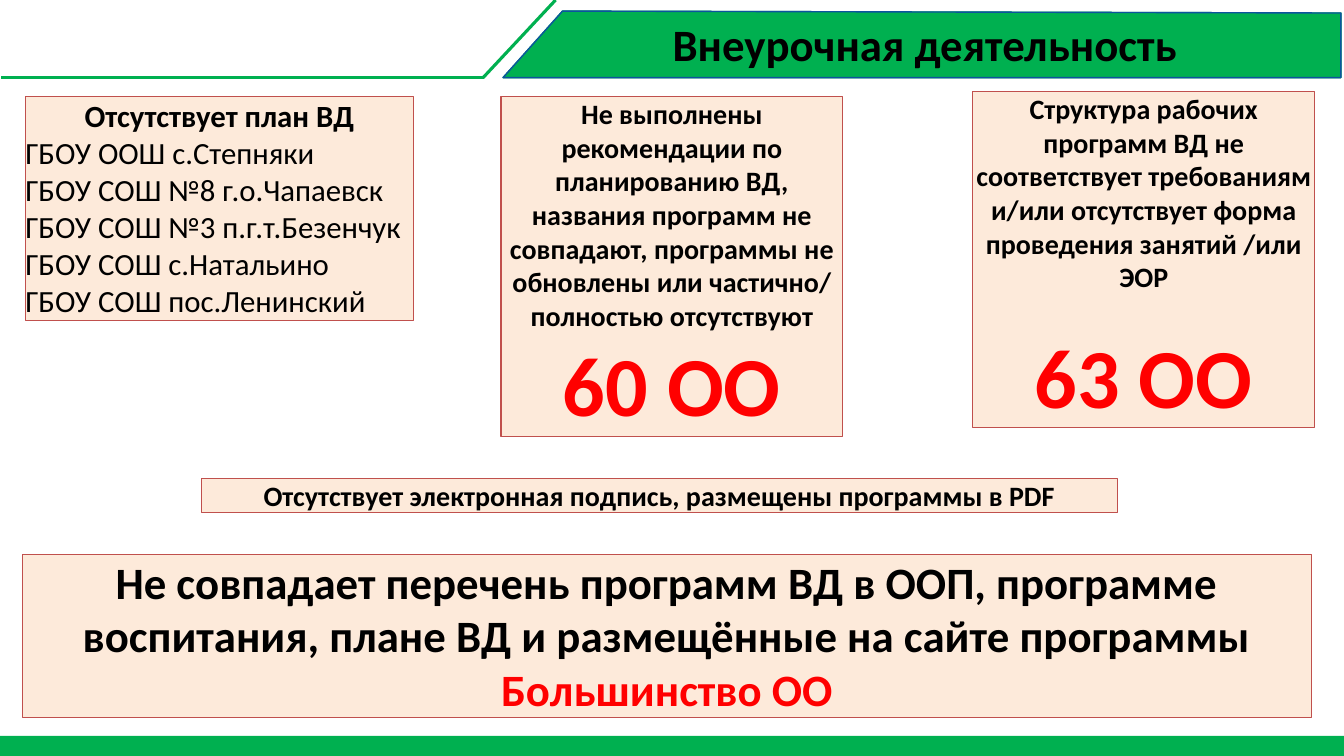
"""Build the slide on shortcomings in extracurricular activity plans."""
import pptx
import pptx.chart.data
import pptx.dml.color
import pptx.enum.shapes
import pptx.enum.text
import pptx.oxml
import pptx.util

COLORS = {"green": "00B050", "blue": "0C549E", "cream": "FDEADA",
          "brick": "C0504D", "black": "000000", "red": "FF0000"}
WIDTH, HEIGHT = pptx.util.Inches(13.33), pptx.util.Inches(7.5)
LEFT = pptx.enum.text.PP_ALIGN.LEFT
CENTER = pptx.enum.text.PP_ALIGN.CENTER


def color(name):
    """Return the named colour of the palette."""
    return pptx.dml.color.RGBColor.from_string(COLORS[name])


def grid(*lengths):
    """Turn alternating columns and rows, 100 each per slide, into EMU."""
    return [round(length * (HEIGHT if index % 2 else WIDTH) / 100)
            for index, length in enumerate(lengths)]


def paint(shape, fill, line, weight=1.0):
    """Give a shape its fill and outline, either of which may be None."""
    if fill:
        shape.fill.solid()
        shape.fill.fore_color.rgb = color(fill)
    else:
        shape.fill.background()
    if line:
        shape.line.color.rgb = color(line)
        shape.line.width = pptx.util.Pt(weight)
    else:
        shape.line.fill.background()


def add_rectangle(page, area, fill, line=None, weight=1.0):
    """Add a flat rectangle."""
    box = page.shapes.add_shape(
        pptx.enum.shapes.MSO_SHAPE.RECTANGLE, *grid(*area))
    box.shadow.inherit = False
    paint(box, fill, line, weight)
    return box


def add_banner(page, fill, line):
    """Add the slanted header banner."""
    corners = [(41.86, 1.47), (99.77, 1.73), (99.77, 10.27), (37.43, 10.27)]
    start, *others = [grid(*corner) for corner in corners]
    builder = page.shapes.build_freeform(*start, scale=1.0)
    builder.add_line_segments(others, close=True)
    banner = builder.convert_to_shape()
    banner.shadow.inherit = False
    paint(banner, fill, line)


def add_rule(page, *ends):
    """Add a straight green line."""
    rule = page.shapes.add_connector(
        pptx.enum.shapes.MSO_CONNECTOR.STRAIGHT, *grid(*ends))
    rule.line.color.rgb = color("green")
    rule.line.width = pptx.util.Pt(2.25)
    rule._element.spPr.append(pptx.oxml.parse_xml(
        '<a:effectLst xmlns:a='
        '"http://schemas.openxmlformats.org/drawingml/2006/main"/>'))


def write(box, lines, align=CENTER):
    """Fill a box with (text, size, colour, bold) lines."""
    frame = box.text_frame
    frame.text = "\n".join(line[0] for line in lines)
    frame.word_wrap = True
    frame.auto_size = pptx.enum.text.MSO_AUTO_SIZE.SHAPE_TO_FIT_TEXT
    frame.vertical_anchor = pptx.enum.text.MSO_ANCHOR.TOP
    frame.margin_left = frame.margin_right = 0
    frame.margin_top = frame.margin_bottom = 0
    for para, (_, size, tint, bold) in zip(frame.paragraphs, lines):
        para.alignment = align
        para.line_spacing = 1.0
        para.space_before = para.space_after = pptx.util.Pt(0)
        for span in para.runs:
            span.font.name = "Calibri"
            span.font.size = pptx.util.Pt(size)
            span.font.bold = bold
            span.font.color.rgb = color(tint)


def add_note(page, area, *lines):
    """Add a cream box with centred bold text."""
    box = add_rectangle(page, area, "cream", "brick", 0.75)
    write(box, [(*line, True) for line in lines])
    return box


def place(page, holder, area):
    """Move a placeholder into its area, in front of the other shapes."""
    holder.left, holder.top, holder.width, holder.height = grid(*area)
    page.shapes._spTree.append(holder._element)


def add_header(page):
    """Draw the template bands and the title."""
    add_banner(page, "green", "green")
    add_banner(page, None, "blue")
    add_rectangle(page, (0, 97.33, 100, 2.67), "green")
    add_rule(page, 41.34, 0, 35.93, 10.3)
    add_rule(page, 36, 10.27, 0.08, 10.27)
    title = page.shapes.title
    place(page, title, (50.04, 2.27, 49.36, 7.2))
    write(title, [("Внеурочная деятельность", 32, "black", True)], LEFT)


def add_schools(page):
    """List the schools that have no plan."""
    schools = ["ГБОУ ООШ с.Степняки", "ГБОУ СОШ №8 г.о.Чапаевск",
               "ГБОУ СОШ №3 п.г.т.Безенчук", "ГБОУ СОШ с.Натальино",
               "ГБОУ СОШ пос.Ленинский"]
    box = page.placeholders[1]
    place(page, box, (1.88, 12.8, 28.88, 29.6))
    paint(box, "cream", "brick", 0.75)
    write(box, [("Отсутствует план ВД", 22, "black", True)]
          + [(school, 22, "black", False) for school in schools], LEFT)
    box.text_frame.paragraphs[0].alignment = CENTER


def main():
    """Build and save the deck."""
    deck = pptx.Presentation()
    deck.slide_width, deck.slide_height = WIDTH, HEIGHT
    page = deck.slides.add_slide(deck.slide_layouts[0])
    add_header(page)
    add_schools(page)
    add_note(page, (37.28, 12.8, 25.43, 44.93),
             ("Не выполнены рекомендации по планированию ВД, названия "
              "программ не совпадают, программы не обновлены или частично/ "
              "полностью отсутствуют", 20, "black"),
             ("60 ОО", 60, "red"))
    structure = add_note(
        page, (72.39, 12.13, 25.43, 44.4),
        ("Структура рабочих программ ВД не соответствует требованиям и/или "
         "отсутствует форма проведения занятий /или ЭОР", 20, "black"),
        ("63 ОО", 60, "red"))
    structure.text_frame.paragraphs[1].space_before = pptx.util.Pt(22)
    add_note(page, (15, 63.33, 68.12, 4.53),
             ("Отсутствует электронная подпись, размещены программы в PDF",
              20, "black"))
    add_note(page, (1.65, 73.33, 95.95, 21.6),
             ("Не совпадает перечень программ ВД в ООП, программе "
              "воспитания, плане ВД и размещённые на сайте программы",
              32, "black"),
             ("Большинство ОО", 32, "red"))
    deck.save("out.pptx")


if __name__ == "__main__":
    main()
